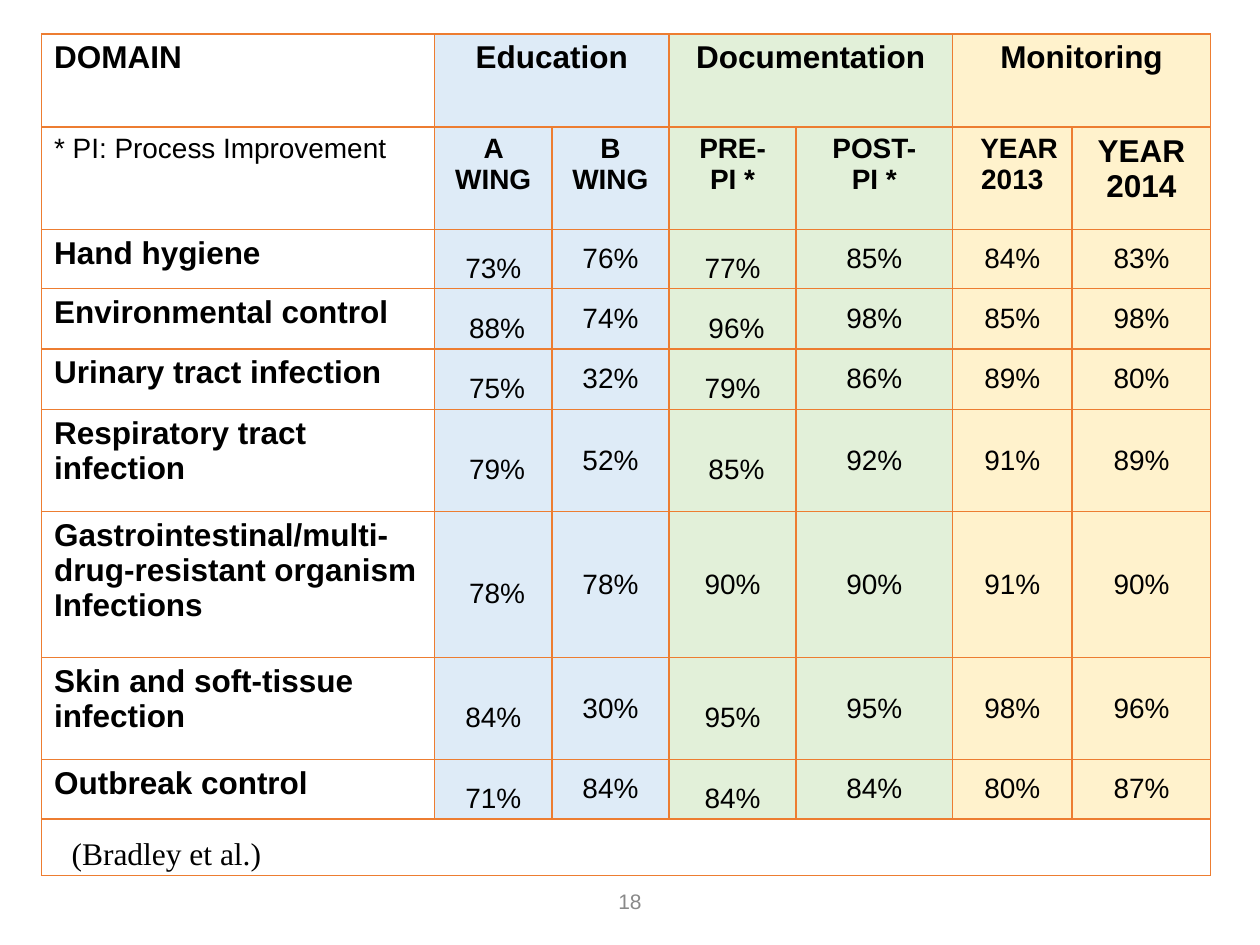
import pptx
import pptx.util
import pptx.dml.color
import pptx.enum.text
import pptx.oxml
import pptx.oxml.ns

Inches = pptx.util.Inches
Pt = pptx.util.Pt
ALIGN = pptx.enum.text.PP_ALIGN
ANCHOR = pptx.enum.text.MSO_ANCHOR

COLORS = {
    "domain": "FFFFFF", "education": "DEEBF7", "documentation": "E2F0D9",
    "monitoring": "FFF2CC", "border": "ED7D31", "text": "000000", "number": "898989",
}
COLUMN_FILLS = ["domain"] + ["education"] * 2 + ["documentation"] * 2 + ["monitoring"] * 2
COLUMN_WIDTHS = [3.12, 0.93, 0.93, 1.01, 1.24, 0.95, 1.1]
ROW_HEIGHTS = [0.74, 0.81, 0.47, 0.48, 0.48, 0.81, 1.16, 0.81, 0.47, 0.45]

HEADINGS = {0: "DOMAIN", 1: "Education", 3: "Documentation", 5: "Monitoring"}
SUBHEADINGS = ["* PI: Process Improvement", "A WING", "B WING", "PRE-\nPI *",
               "POST-\nPI *", "YEAR\n2013", "YEAR\n2014"]
RESULTS = [
    ("Hand hygiene", 73, 76, 77, 85, 84, 83),
    ("Environmental control", 88, 74, 96, 98, 85, 98),
    ("Urinary tract infection", 75, 32, 79, 86, 89, 80),
    ("Respiratory tract infection", 79, 52, 85, 92, 91, 89),
    ("Gastrointestinal/multi-drug-resistant organism Infections", 78, 78, 90, 90, 91, 90),
    ("Skin and soft-tissue infection", 84, 30, 95, 95, 98, 96),
    ("Outbreak control", 71, 84, 84, 84, 80, 87),
]
# Values set slightly to the right, as (row, column)
INDENTED = {(3, 1), (4, 1), (5, 1), (6, 1), (3, 3), (5, 3)}


def write(frame, text, alignment, color="text", **font_format):
    """Fill a text frame, one paragraph per line."""
    frame.text = text
    for paragraph in frame.paragraphs:
        paragraph.alignment = alignment
        for name, value in ({"name": "Arial"} | font_format).items():
            setattr(paragraph.font, name, value)
        paragraph.font.color.rgb = pptx.dml.color.RGBColor.from_string(COLORS[color])


presentation = pptx.Presentation()
presentation.slide_width = Inches(10)
presentation.slide_height = Inches(7.5)
slide = presentation.slides.add_slide(presentation.slide_layouts[6])

# Table grid
table = slide.shapes.add_table(
    len(ROW_HEIGHTS), len(COLUMN_WIDTHS), Inches(0.33), Inches(0.27),
    Inches(sum(COLUMN_WIDTHS)), Inches(sum(ROW_HEIGHTS))).table
for column, width in zip(table.columns, COLUMN_WIDTHS):
    column.width = Inches(width)
for row, height in zip(table.rows, ROW_HEIGHTS):
    row.height = Inches(height)

# Cell borders and fills
last_row = len(ROW_HEIGHTS) - 1
for row_index in range(len(ROW_HEIGHTS)):
    for column_index, fill_name in enumerate(COLUMN_FILLS):
        cell = table.cell(row_index, column_index)
        properties = cell._tc.get_or_add_tcPr()
        for side in ("lnL", "lnR", "lnT", "lnB"):
            properties.append(pptx.oxml.parse_xml(
                f'<a:{side} {pptx.oxml.ns.nsdecls("a")} w="12700"><a:solidFill>'
                f'<a:srgbClr val="{COLORS["border"]}"/></a:solidFill></a:{side}>'))
        fill = COLORS["domain" if row_index == last_row else fill_name]
        cell.fill.solid()
        cell.fill.fore_color.rgb = pptx.dml.color.RGBColor.from_string(fill)

# Group headings and the empty bottom row
for column_index, heading in HEADINGS.items():
    cell = table.cell(0, column_index)
    if column_index:
        cell.merge(table.cell(0, column_index + 1))
    write(cell.text_frame, heading, ALIGN.CENTER if column_index else ALIGN.LEFT,
          size=Pt(18), bold=True)
table.cell(last_row, 0).merge(table.cell(last_row, len(COLUMN_WIDTHS) - 1))

# Column subheadings
for column_index, subheading in enumerate(SUBHEADINGS):
    write(table.cell(1, column_index).text_frame, subheading,
          ALIGN.CENTER if column_index else ALIGN.LEFT,
          size=Pt(18 if column_index == 6 else 16), bold=column_index > 0)
year_paragraph = table.cell(1, 5).text_frame.paragraphs[0]
year_paragraph._p.get_or_add_pPr().set("marL", str(Inches(0.11)))

# Results by domain
for row_index, (domain, *values) in enumerate(RESULTS, start=2):
    write(table.cell(row_index, 0).text_frame, domain, ALIGN.LEFT, size=Pt(18), bold=True)
    for column_index, value in enumerate(values, start=1):
        cell = table.cell(row_index, column_index)
        cell.vertical_anchor = ANCHOR.MIDDLE
        write(cell.text_frame, f"{value}%", ALIGN.CENTER, size=Pt(16), bold=False)
        if column_index in (1, 3):
            indent = 0.06 if (row_index, column_index) in INDENTED else 0
            margins = {"margin_left": 0.07 + indent, "margin_right": 0.07,
                       "margin_top": 0.03, "margin_bottom": 0}
            if (row_index, column_index) == (6, 3):
                margins["margin_top"] = 0
            else:
                paragraph = cell.text_frame.paragraphs[0]
                paragraph.line_spacing = 1.5
                paragraph.space_after = Pt(2)
            for name, value in margins.items():
                setattr(cell, name, Inches(value))

# Citation
citation = slide.shapes.add_textbox(Inches(0.47), Inches(6.57), Inches(2.26), Inches(0.4))
citation.text_frame.word_wrap = True
write(citation.text_frame, "(Bradley et al.)", ALIGN.LEFT,
      name="Times New Roman", size=Pt(18))

# Slide number
number = slide.shapes.add_textbox(Inches(3.31), Inches(6.95), Inches(3.38), Inches(0.4))
number.text_frame.word_wrap = True
number.text_frame.vertical_anchor = ANCHOR.MIDDLE
write(number.text_frame, "18", ALIGN.CENTER, color="number", size=Pt(12))

presentation.save("out.pptx")
